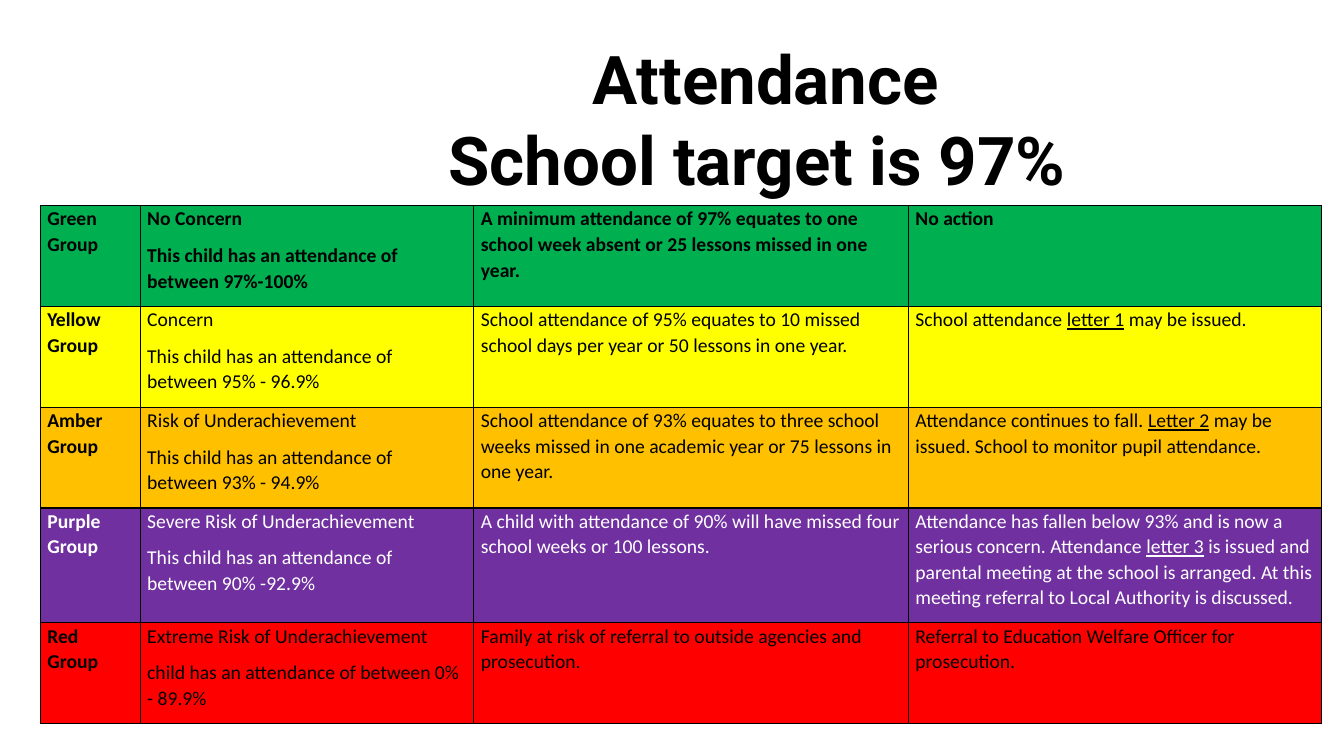
from lxml import etree
from pptx import Presentation, util as u
from pptx.dml.color import RGBColor
from pptx.enum import text
from pptx.oxml.ns import qn

BLACK = RGBColor(0x00, 0x00, 0x00)
WHITE = RGBColor(0xFF, 0xFF, 0xFF)
GREEN = RGBColor(0x00, 0xB0, 0x50)
YELLOW = RGBColor(0xFF, 0xFF, 0x00)
AMBER = RGBColor(0xFF, 0xC0, 0x00)
PURPLE = RGBColor(0x70, 0x30, 0xA0)
RED = RGBColor(0xFF, 0x00, 0x00)

COLUMNS = [7.43, 24.83, 32.33, 30.76]
ROWS = [13.33, 13.33, 13.33, 15.2, 13.33]

GROUPS = [
    (GREEN, BLACK, True, [
        "Green Group",
        "No Concern\nThis child has an attendance of between 97%-100%",
        "A minimum attendance of 97% equates to one school week absent "
        "or 25 lessons missed in one year.",
        "No action"]),
    (YELLOW, BLACK, False, [
        "Yellow Group",
        "Concern\nThis child has an attendance of between 95% - 96.9%",
        "School attendance of 95% equates to 10 missed school days per year "
        "or 50 lessons in one year.",
        "School attendance |letter 1| may be issued."]),
    (AMBER, BLACK, False, [
        "Amber Group",
        "Risk of Underachievement\n"
        "This child has an attendance of between 93% - 94.9%",
        "School attendance of 93% equates to three school weeks missed "
        "in one academic year or 75 lessons in one year.",
        "Attendance continues to fall. |Letter 2| may be issued. "
        "School to monitor pupil attendance."]),
    (PURPLE, WHITE, False, [
        "Purple Group",
        "Severe Risk of Underachievement\n"
        "This child has an attendance of between 90% -92.9%",
        "A child with attendance of 90% will have missed four school weeks "
        "or 100 lessons.",
        "Attendance has fallen below 93% and is now a serious concern. "
        "Attendance |letter 3| is issued and parental meeting at the school "
        "is arranged. At this meeting referral to Local Authority is "
        "discussed."]),
    (RED, BLACK, False, [
        "Red Group",
        "Extreme Risk of Underachievement\n"
        "child has an attendance of between 0% - 89.9%",
        "Family at risk of referral to outside agencies and prosecution.",
        "Referral to Education Welfare Officer for prosecution."]),
]


class AttendanceSlide:
    """Draw on a slide divided into 100 columns and 100 rows."""

    title_font, body_font = "Roboto", "Calibri"
    title_size, body_size = u.Pt(48), u.Pt(14)

    def __init__(self, prs):
        self.slide = prs.slides.add_slide(prs.slide_layouts[5])
        self.col, self.row = prs.slide_width / 100, prs.slide_height / 100

    def box(self, left, top, width, height):
        """Turn grid units into slide lengths."""
        return (round(left * self.col), round(top * self.row),
                round(width * self.col), round(height * self.row))

    def style(self, r, name, size, color, bold):
        """Set the font of a run."""
        r.font.name, r.font.size, r.font.bold = name, size, bold
        r.font.color.rgb = color

    def title(self, words, *place):
        """Move, fill and format the title placeholder."""
        sp = self.slide.shapes.title
        sp.left, sp.top, sp.width, sp.height = self.box(*place)
        tf = sp.text_frame
        tf.text = words
        tf.word_wrap = True
        tf.auto_size = text.MSO_AUTO_SIZE.SHAPE_TO_FIT_TEXT
        tf.vertical_anchor = text.MSO_ANCHOR.TOP
        for p in tf.paragraphs:
            p.alignment = text.PP_ALIGN.CENTER
            p.line_spacing = 1.0
            p.space_before = u.Pt(0)
            for r in p.runs:
                self.style(r, self.title_font, self.title_size, BLACK, True)

    def border(self, cell):
        """Rule all four sides of a cell in black."""
        props = cell._tc.get_or_add_tcPr()
        for i, side in enumerate(("a:lnL", "a:lnR", "a:lnT", "a:lnB")):
            ln = etree.Element(qn(side), w=str(u.Pt(1)))
            fill = etree.SubElement(ln, qn("a:solidFill"))
            etree.SubElement(fill, qn("a:srgbClr"), val=str(BLACK))
            props.insert(i, ln)

    def cell(self, cell, words, fill, color, bold):
        """Fill a cell; words between bars are underlined."""
        cell.fill.solid()
        cell.fill.fore_color.rgb = fill
        self.border(cell)
        cell.margin_left = cell.margin_right = u.Inches(0.07)
        cell.margin_top = cell.margin_bottom = 0
        tf = cell.text_frame
        tf.text = words
        for p in tf.paragraphs:
            p.line_spacing, p.space_after = 1.07, u.Pt(8)
            parts = p.text.split("|")
            p.text = parts[0]
            for part in parts[1:]:
                p.add_run().text = part
            for i, r in enumerate(p.runs):
                self.style(r, self.body_font, self.body_size, color, bold)
                r.font.underline = i % 2 == 1

    def table(self, left, top, columns, rows, groups):
        """Add a table with one coloured row for each group."""
        place = self.box(left, top, sum(columns), sum(rows))
        table = self.slide.shapes.add_table(len(rows), len(columns), *place).table
        table.first_row = table.horz_banding = False
        for column, width in zip(table.columns, columns):
            column.width = round(width * self.col)
        for row, height, (fill, color, strong, texts) in zip(table.rows, rows, groups):
            row.height = round(height * self.row)
            for i, (cell, words) in enumerate(zip(row.cells, texts)):
                self.cell(cell, words, fill, color, strong or i == 0)


def main():
    prs = Presentation()
    prs.slide_width, prs.slide_height = u.Inches(13.33), u.Inches(7.5)
    s = AttendanceSlide(prs)
    s.title("Attendance\nSchool target is 97% ", 15.6, 4.27, 82.75, 22.93)
    s.table(3, 27.2, COLUMNS, ROWS, GROUPS)
    prs.save("out.pptx")


if __name__ == "__main__":
    main()
